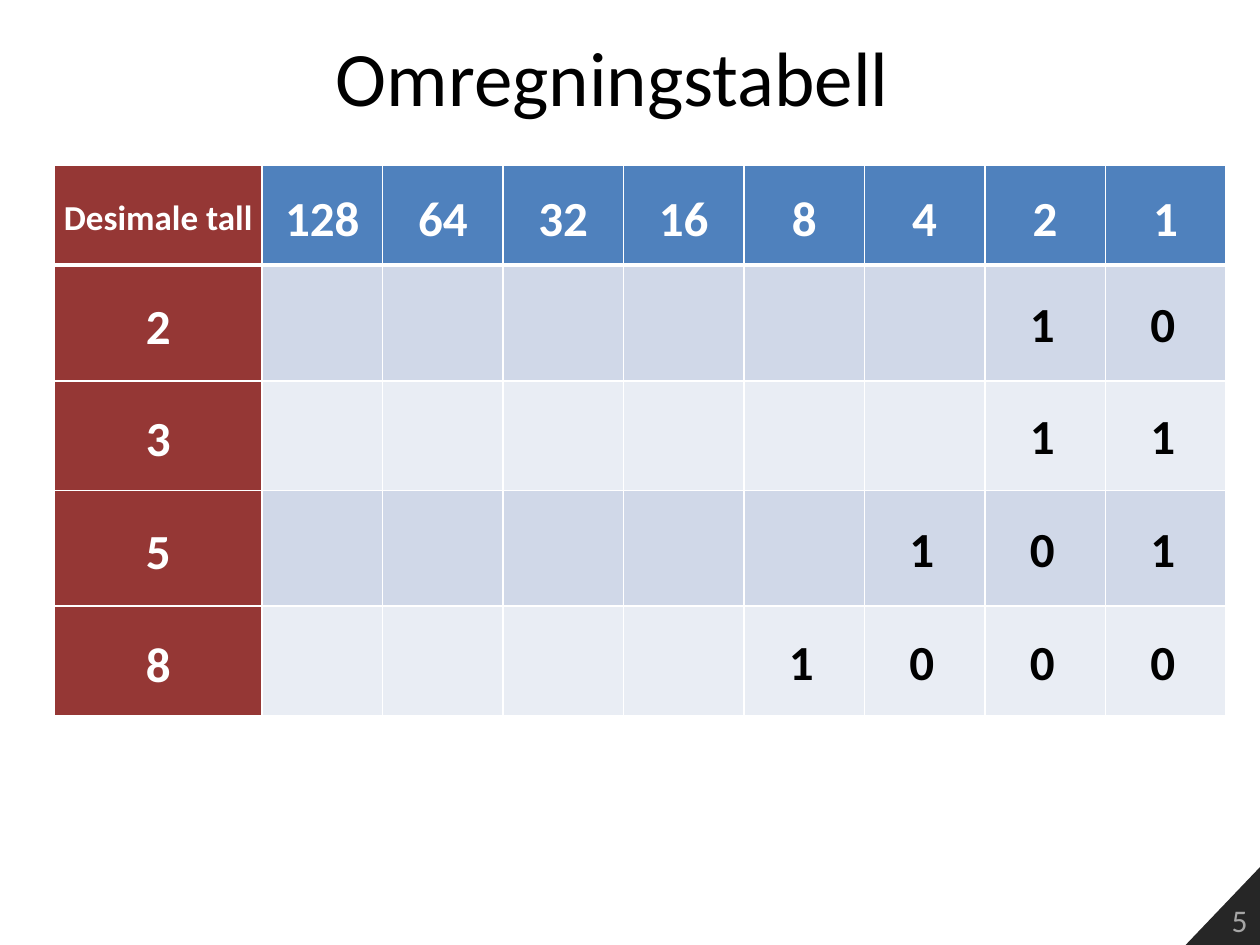
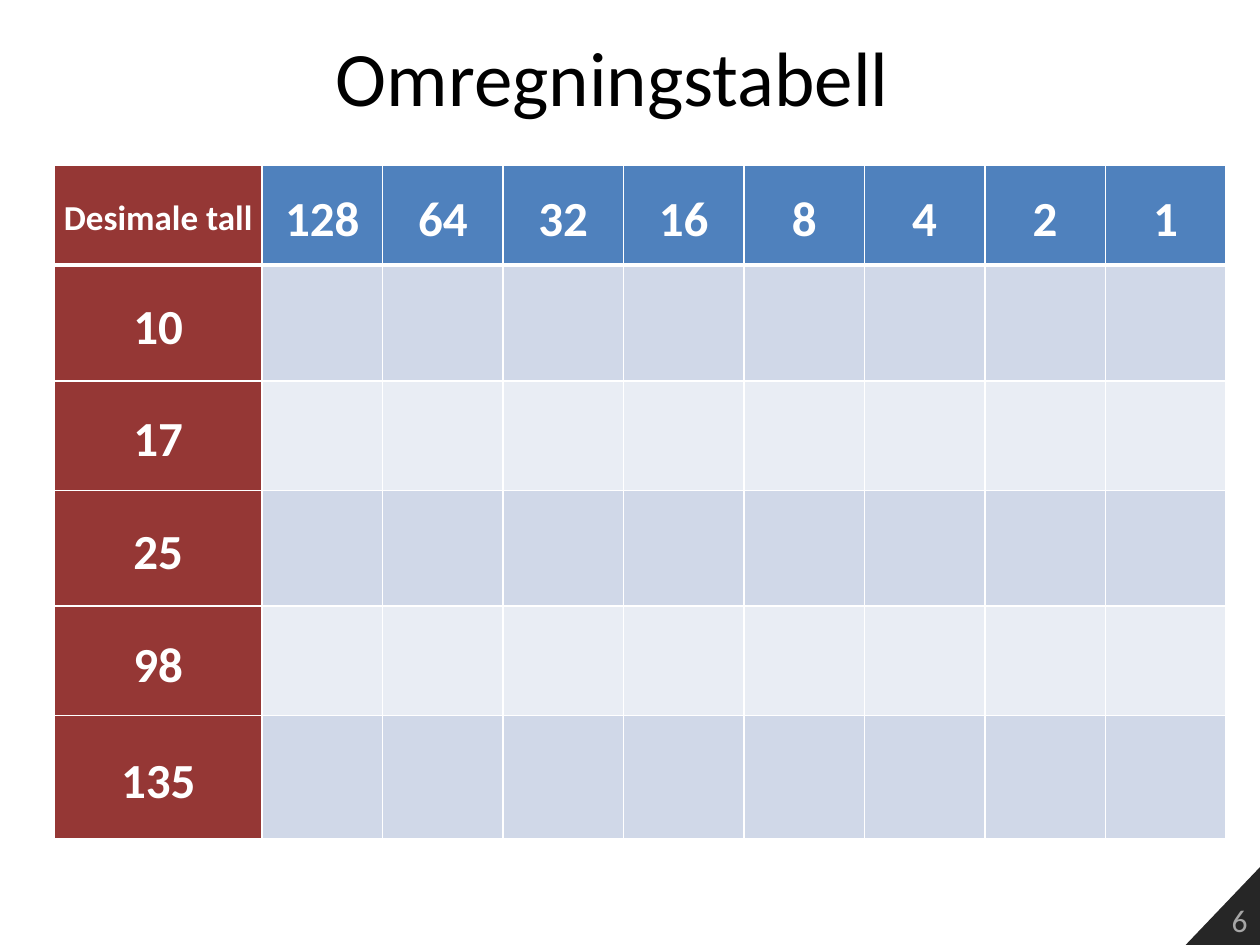
from dataclasses import dataclass

from lxml import etree
from pptx import Presentation
from pptx.dml.color import RGBColor
from pptx.enum.text import MSO_ANCHOR, MSO_AUTO_SIZE, PP_ALIGN
from pptx.oxml.ns import qn
from pptx.util import Pt

MIDDLE, BOTTOM = MSO_ANCHOR.MIDDLE, MSO_ANCHOR.BOTTOM
CENTER, RIGHT = PP_ALIGN.CENTER, PP_ALIGN.RIGHT
NO_AUTOFIT, GROW = MSO_AUTO_SIZE.NONE, MSO_AUTO_SIZE.SHAPE_TO_FIT_TEXT


@dataclass(frozen=True)
class Theme:
    font: str = "Calibri"
    text: str = "000000"
    white: str = "FFFFFF"
    decimal_fill: str = "953735"
    header_fill: str = "4F81BD"
    bands: tuple = ("D0D8E8", "E9EDF4")
    corner: str = "262626"
    page_number: str = "A6A6A6"
    title_size: int = 44
    number_size: int = 28
    label_size: int = 20
    page_size: int = 18


THEME = Theme()
SLIDE_WIDTH, SLIDE_HEIGHT = 720, 540
TITLE_ONLY = 5
TITLE = "Omregningstabell "
DECIMAL_LABEL = "Desimale tall"
PLACE_VALUES = [2 ** power for power in range(7, -1, -1)]

TABLE_LEFT, TABLE_TOP = 31, 94.5
DECIMAL_WIDTH, BIT_WIDTH = 118.8, 68.85
HEADER_HEIGHT = 56.9
ROW_HEIGHTS = [66.2, 62.6, 66.2, 62.6, 70.6]
DIGIT_WIDTH, DIGIT_HEIGHT = 28.8, 41


def color(value):
    return RGBColor.from_string(value)


def add_run(paragraph, text, size, text_color, bold=False):
    run = paragraph.add_run()
    run.text = text
    run.font.name = THEME.font
    run.font.size = Pt(size)
    run.font.bold = bold
    run.font.color.rgb = color(text_color)


def add_title(slide):
    title = slide.shapes.title
    title.left, title.top, title.width, title.height = Pt(31), Pt(9.4), Pt(648), Pt(67.7)
    title.text_frame.auto_size = NO_AUTOFIT
    title.text_frame.vertical_anchor = MIDDLE
    paragraph = title.text_frame.paragraphs[0]
    paragraph.alignment = CENTER
    add_run(paragraph, TITLE, THEME.title_size, THEME.text)


def add_page_corner(slide, page_number):
    """Fill the lower right corner with a triangle that holds the page number."""
    builder = slide.shapes.build_freeform(Pt(677.5), Pt(SLIDE_HEIGHT))
    builder.add_line_segments(
        [(Pt(SLIDE_WIDTH), Pt(495.5)), (Pt(SLIDE_WIDTH), Pt(SLIDE_HEIGHT))], close=True)
    corner = builder.convert_to_shape()
    corner.shadow.inherit = False
    corner.fill.solid()
    corner.fill.fore_color.rgb = color(THEME.corner)
    corner.line.fill.background()
    corner.text_frame.vertical_anchor = BOTTOM
    paragraph = corner.text_frame.paragraphs[0]
    paragraph.alignment = RIGHT
    add_run(paragraph, str(page_number), THEME.page_size, THEME.page_number)


def set_borders(cell, top=1, bottom=1):
    properties = cell._tc.get_or_add_tcPr()
    for side, width in (("L", 1), ("R", 1), ("T", top), ("B", bottom)):
        line = etree.SubElement(properties, qn(f"a:ln{side}"), w=str(Pt(width)))
        fill = etree.SubElement(line, qn("a:solidFill"))
        etree.SubElement(fill, qn("a:srgbClr"), val=THEME.white)


def fill_cell(cell, fill):
    cell.fill.solid()
    cell.fill.fore_color.rgb = color(fill)


def write_cell(cell, text, size=THEME.number_size):
    cell.vertical_anchor = MIDDLE
    cell.margin_left = cell.margin_right = Pt(5)
    cell.margin_top = cell.margin_bottom = 0
    paragraph = cell.text_frame.paragraphs[0]
    paragraph.alignment = CENTER
    paragraph.line_spacing = 1.15
    add_run(paragraph, text, size, THEME.white, bold=True)


def add_conversion_table(slide, decimals):
    """Add place values as the header, and one empty row for each decimal number."""
    heights = [HEADER_HEIGHT] + ROW_HEIGHTS[:len(decimals)]
    widths = [DECIMAL_WIDTH] + [BIT_WIDTH] * len(PLACE_VALUES)
    table = slide.shapes.add_table(
        len(heights), len(widths), Pt(TABLE_LEFT), Pt(TABLE_TOP),
        Pt(sum(widths)), Pt(sum(heights))).table
    for column, width in zip(table.columns, widths):
        column.width = Pt(width)
    for row_index, height in enumerate(heights):
        table.rows[row_index].height = Pt(height)
        row_fill = THEME.bands[(row_index - 1) % 2] if row_index else THEME.header_fill
        for column_index in range(len(widths)):
            cell = table.cell(row_index, column_index)
            set_borders(cell, top=3 if row_index == 1 else 1,
                        bottom=3 if row_index == 0 else 1)
            fill_cell(cell, row_fill if column_index else THEME.decimal_fill)
    write_cell(table.cell(0, 0), DECIMAL_LABEL, THEME.label_size)
    for column_index, value in enumerate(PLACE_VALUES, start=1):
        write_cell(table.cell(0, column_index), str(value))
    for row_index, decimal in enumerate(decimals, start=1):
        write_cell(table.cell(row_index, 0), str(decimal))


def add_digit(slide, digit, center_x, center_y):
    box = slide.shapes.add_textbox(
        Pt(center_x - DIGIT_WIDTH / 2), Pt(center_y - DIGIT_HEIGHT / 2),
        Pt(DIGIT_WIDTH), Pt(DIGIT_HEIGHT))
    box.text_frame.word_wrap = False
    box.text_frame.auto_size = GROW
    add_run(box.text_frame.paragraphs[0], digit, THEME.number_size, THEME.text, bold=True)


def add_binary_digits(slide, decimals):
    """Lay the binary digits of each number over its row, ending in the last column."""
    table_right = TABLE_LEFT + DECIMAL_WIDTH + BIT_WIDTH * len(PLACE_VALUES)
    row_top = TABLE_TOP + HEADER_HEIGHT
    for decimal, height in zip(decimals, ROW_HEIGHTS):
        digits = format(decimal, "b")
        for index, digit in enumerate(digits):
            center_x = table_right - (len(digits) - index - 0.5) * BIT_WIDTH - 1.5
            add_digit(slide, digit, center_x, row_top + height / 2)
        row_top += height


def add_conversion_slide(presentation, page_number, decimals):
    slide = presentation.slides.add_slide(presentation.slide_layouts[TITLE_ONLY])
    add_page_corner(slide, page_number)
    add_title(slide)
    add_conversion_table(slide, decimals)
    return slide


def main():
    presentation = Presentation()
    presentation.slide_width, presentation.slide_height = Pt(SLIDE_WIDTH), Pt(SLIDE_HEIGHT)
    solved = [2, 3, 5, 8]
    example_slide = add_conversion_slide(presentation, 5, solved)
    add_binary_digits(example_slide, solved)
    add_conversion_slide(presentation, 6, [10, 17, 25, 98, 135])
    presentation.save("out.pptx")


if __name__ == "__main__":
    main()
